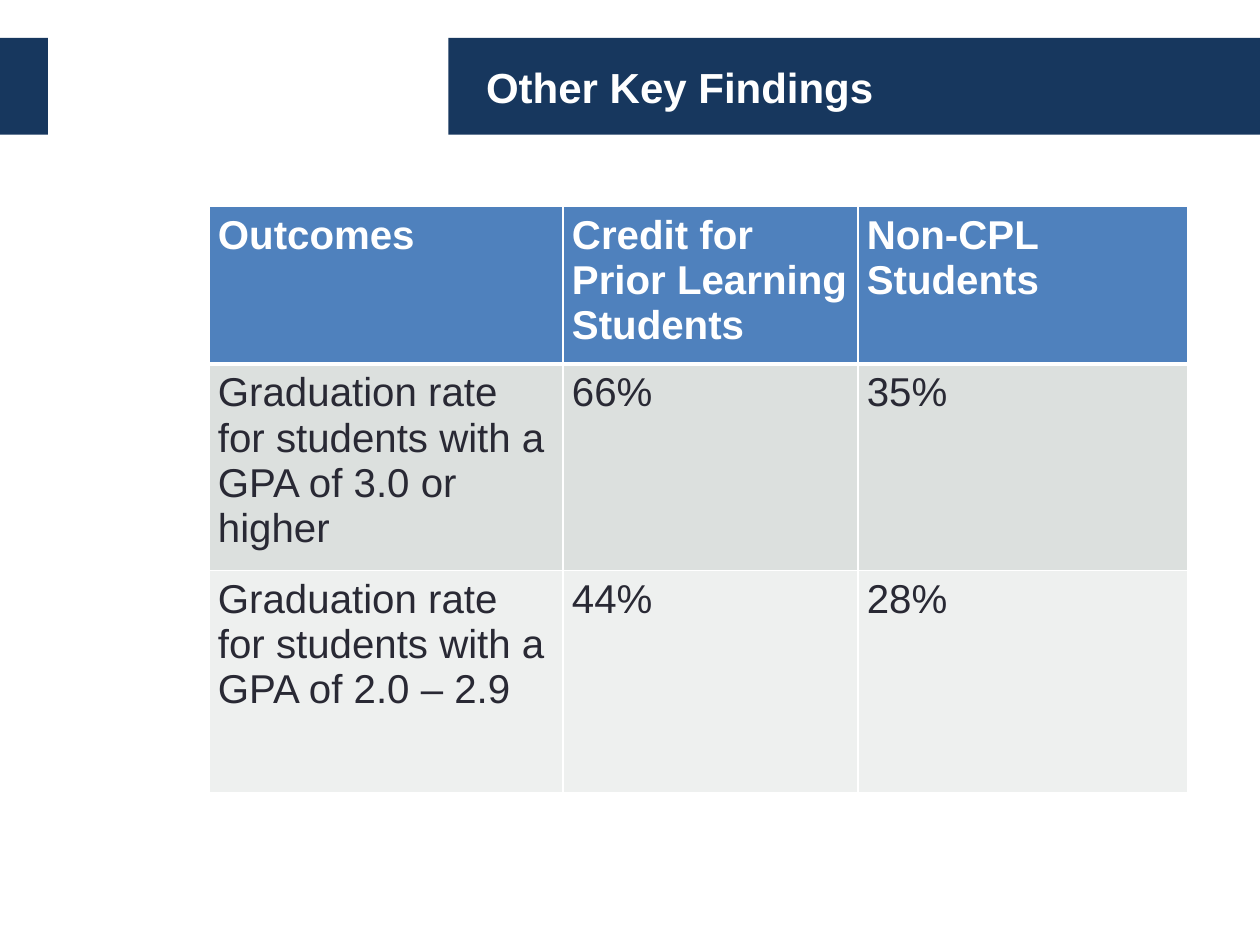
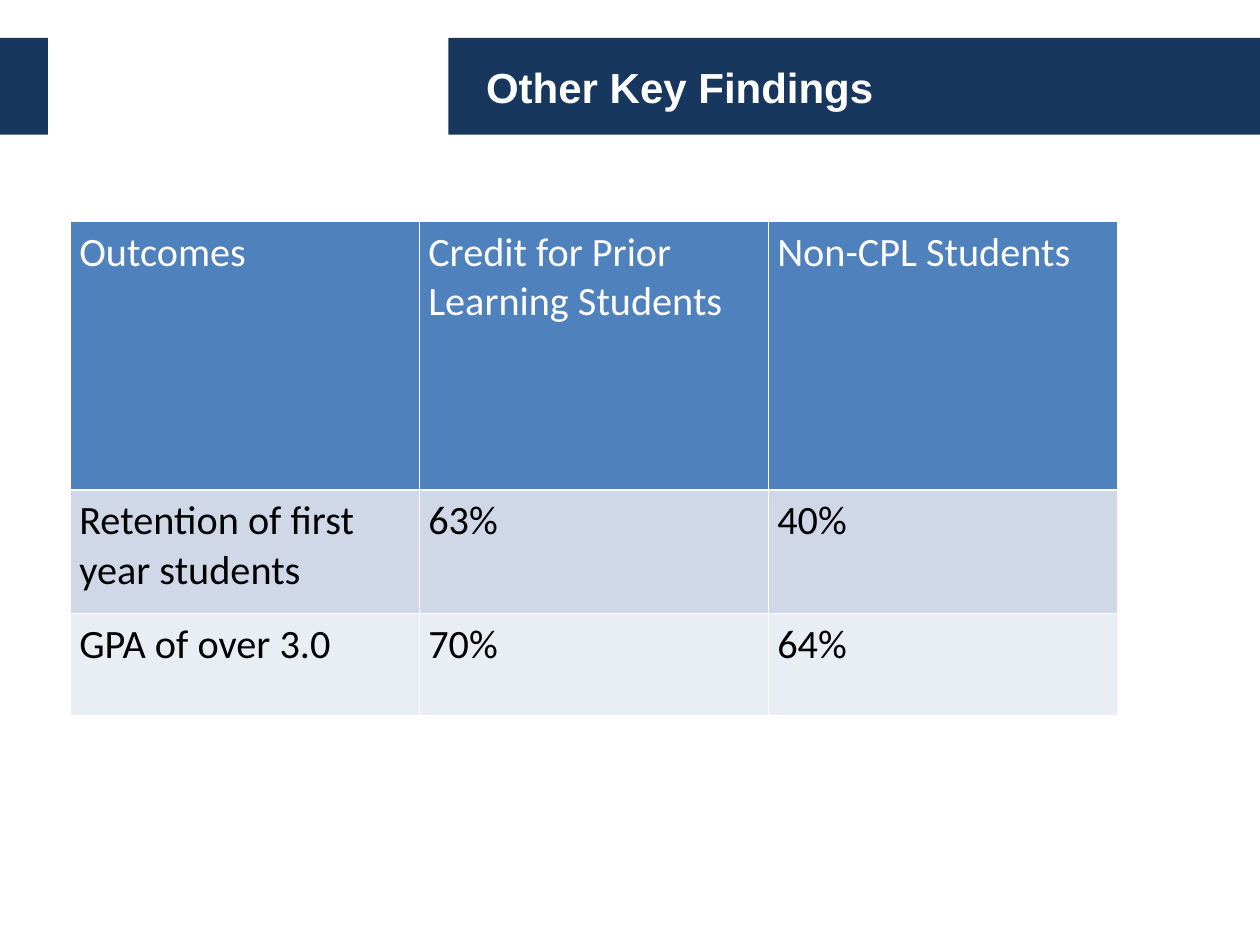
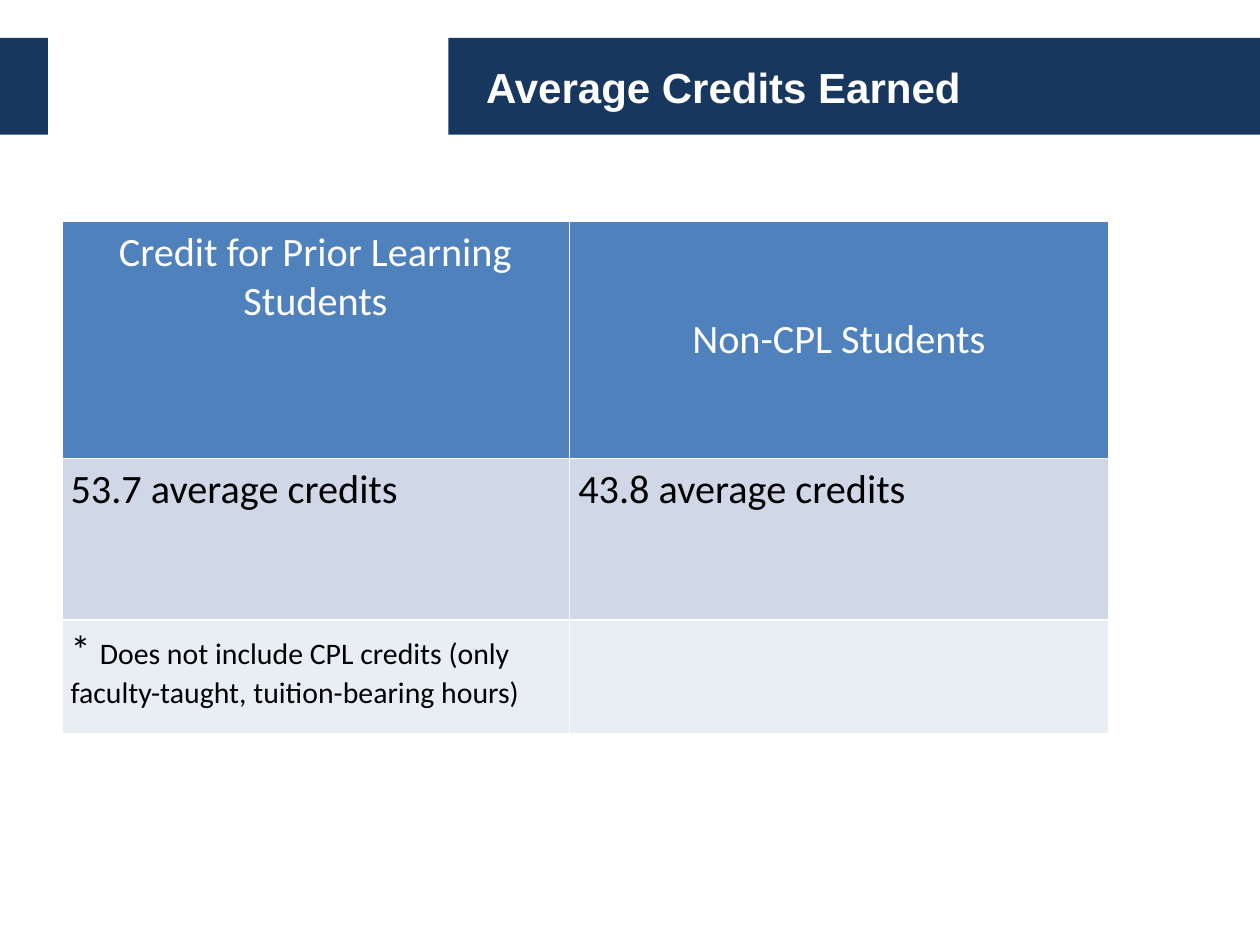
"""Build three slides of findings on credit for prior learning."""
from lxml import etree
from pptx import Presentation
from pptx.dml.color import RGBColor
from pptx.enum.shapes import MSO_SHAPE
from pptx.enum.text import MSO_ANCHOR, PP_ALIGN
from pptx.oxml.ns import qn
from pptx.util import Inches, Pt

RECT = MSO_SHAPE.RECTANGLE
MID, TOP = MSO_ANCHOR.MIDDLE, MSO_ANCHOR.TOP
LEFT, CENTER = PP_ALIGN.LEFT, PP_ALIGN.CENTER
NAVY, BLUE, WHITE, BLACK = "17375E", "4F81BD", "FFFFFF", "000000"
COOL = [BLUE, "D0D8E8", "E9EDF4"]
GRAY = [BLUE, "DCE0DE", "EEF0EF"]
BANDS = [(3.56, 6.44), (0, 0.38)]
BAND_TOP, BAND_HIGH = 0.3, 0.77


def paint(item, color):
    """Give a fill one solid colour."""
    item.solid()
    item.fore_color.rgb = RGBColor.from_string(color)


def write(frame, text, size=23, font="Calibri", color=BLACK, bold=False,
          align=LEFT, anchor=TOP):
    """Add a run of text to the first paragraph of a frame."""
    frame.word_wrap = True
    frame.vertical_anchor = anchor
    para = frame.paragraphs[0]
    para.alignment = align
    run = para.add_run()
    run.text = text
    run.font.size = Pt(size)
    run.font.name = font
    run.font.bold = bold
    run.font.color.rgb = RGBColor.from_string(color)


HEADS = ["Outcomes", "Credit for Prior Learning Students", "Non-CPL Students"]
PAGES = [
    dict(title="Other Key Findings", at=(1.66, 1.64), font="Arial",
         ink="292934", fills=GRAY, bold=True, align=LEFT, rule=3,
         wide=[2.81, 2.34, 2.62], high=[1.23, 1.64, 1.76],
         rows=[HEADS,
               ["Graduation rate for students with a GPA of 3.0 or higher",
                "66%", "35%"],
               ["Graduation rate for students with a GPA of 2.0 – 2.9",
                "44%", "28%"]]),
    dict(title="Other Key Findings", at=(0.56, 1.76), font="Calibri",
         ink=BLACK, fills=COOL, bold=False, align=LEFT, rule=1,
         wide=[2.77] * 3, high=[2.13, 0.98, 0.81],
         rows=[HEADS,
               ["Retention of first year students", "63%", "40%"],
               ["GPA of over 3.0", "70%", "64%"]]),
    dict(title="Average Credits Earned", at=(0.49, 1.76), font="Calibri",
         ink=BLACK, fills=COOL, bold=False, align=CENTER, rule=1,
         wide=[4.03, 4.28], high=[1.88, 1.28, 0.9],
         rows=[HEADS[1:],
               ["53.7 average credits", "43.8 average credits"],
               ["* ", ""]]),
]

deck = Presentation()
deck.slide_width, deck.slide_height = Inches(10), Inches(7.5)

for page in PAGES:
    slide = deck.slides.add_slide(deck.slide_layouts[6])
    for left, width in BANDS:
        band = slide.shapes.add_shape(RECT, Inches(left), Inches(BAND_TOP),
                                      Inches(width), Inches(BAND_HIGH))
        band.shadow.inherit = False
        paint(band.fill, NAVY)
        band.line.fill.background()
    title = slide.shapes.add_textbox(Inches(3.76), Inches(BAND_TOP),
                                     Inches(5.74), Inches(BAND_HIGH))
    write(title.text_frame, page["title"], size=24, font="Arial",
          color=WHITE, bold=True, anchor=MID)

    wide, high, rows = page["wide"], page["high"], page["rows"]
    left, top = page["at"]
    grid = slide.shapes.add_table(len(high), len(wide), Inches(left),
                                  Inches(top), Inches(sum(wide)),
                                  Inches(sum(high))).table
    for col, width in zip(grid.columns, wide):
        col.width = Inches(width)
    for r, row in enumerate(rows):
        grid.rows[r].height = Inches(high[r])
        head = r == 0
        for c, text in enumerate(row):
            cell = grid.cell(r, c)
            cell.margin_left = cell.margin_right = Inches(0.07)
            cell.margin_top = cell.margin_bottom = Inches(0.05)
            props = cell._tc.get_or_add_tcPr()
            for side in "LRTB":
                thick = (r, side) in [(0, "B"), (1, "T")]
                size = Pt(page["rule"] if thick else 1)
                edge = etree.SubElement(props, qn("a:ln" + side), w=str(size))
                solid = etree.SubElement(edge, qn("a:solidFill"))
                etree.SubElement(solid, qn("a:srgbClr"), val=WHITE)
            paint(cell.fill, page["fills"][r])
            if text:
                write(cell.text_frame, text, font=page["font"],
                      color=WHITE if head else page["ink"],
                      bold=head and page["bold"],
                      align=page["align"] if head else LEFT)

grid.cell(0, 1).vertical_anchor = MID
write(grid.cell(2, 0).text_frame,
      "Does not include CPL credits (only faculty-taught, "
      "tuition-bearing hours)", size=17)

deck.save("out.pptx")
